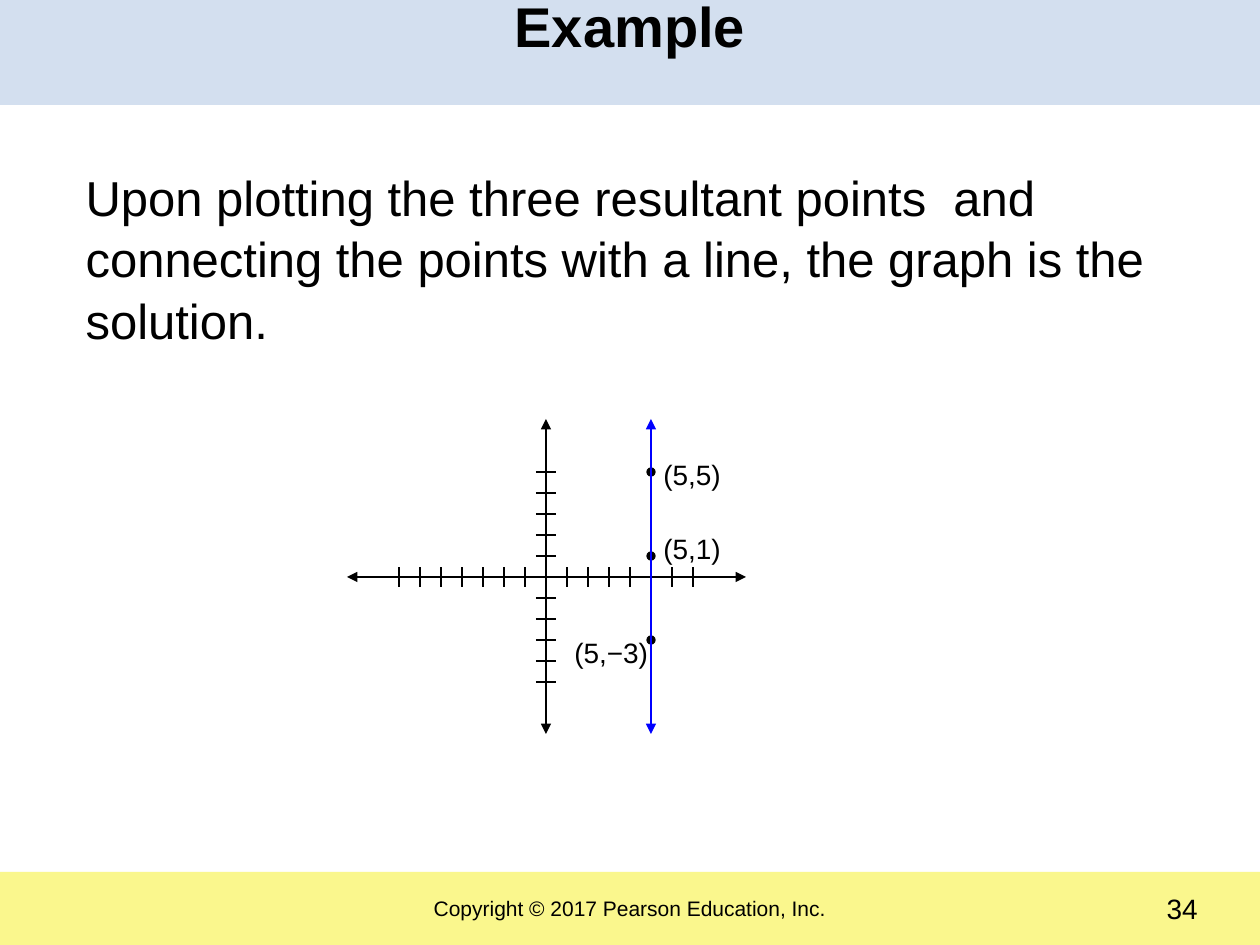
from dataclasses import dataclass

from pptx import Presentation
from pptx import util as u
from pptx.dml.color import RGBColor
from pptx.enum import shapes, text
from pptx.oxml.ns import qn
from lxml import etree


@dataclass(frozen=True)
class Theme:
    font: str = "Arial"
    ink: str = "000000"
    blue: str = "0000FF"
    band: str = "D3DFEF"
    foot: str = "FAF78D"
    title: int = 32
    body: int = 28
    label: int = 16
    small: int = 12
    line: float = 0.75


@dataclass(frozen=True)
class Box:
    x: int
    y: int
    w: int
    h: int


@dataclass(frozen=True)
class Point:
    x: int
    y: int
    name: str
    box: Box


T = Theme()
W, H = 1260, 945
OX, OY, STEP = 546, 577, 21  # origin and unit of the graph
TICK, DOT = 10, 4  # half a tick, radius of a dot
POINTS = [
    Point(5, 5, "(5,5)", Box(651, 451, 95, 46)),
    Point(5, 1, "(5,1)", Box(651, 525, 95, 46)),
    Point(5, -3, "(5,−3)", Box(562, 629, 105, 46)),
]


def px(n: int) -> u.Emu:
    return u.Emu(round(n * 914400 / 126))


def rgb(code: str) -> RGBColor:
    return RGBColor.from_string(code)


def area(box: Box) -> list[u.Emu]:
    return [px(n) for n in (box.x, box.y, box.w, box.h)]


def place(shape, box: Box) -> None:
    shape.left, shape.top, shape.width, shape.height = area(box)


def write(shape, words: str, size: int, align=text.PP_ALIGN.LEFT,
          bold: bool = False, anchor=text.MSO_ANCHOR.TOP):
    frame = shape.text_frame
    frame.word_wrap = True
    frame.auto_size = text.MSO_AUTO_SIZE.NONE
    frame.vertical_anchor = anchor
    para = frame.paragraphs[0]
    para.alignment = align
    para.space_before = u.Pt(0)
    run = para.add_run()
    run.text = words
    font = run.font
    font.name, font.size, font.bold = T.font, u.Pt(size), bold
    font.color.rgb = rgb(T.ink)
    return para


def trim(shape) -> None:
    frame = shape.text_frame
    frame.margin_left = frame.margin_right = 0
    frame.margin_top = frame.margin_bottom = 0


def fill(parent, kind, box: Box, code: str):
    shape = parent.add_shape(kind, *area(box))
    shape.shadow.inherit = False
    shape.fill.solid()
    shape.fill.fore_color.rgb = rgb(code)
    shape.line.fill.background()
    return shape


def rule(parent, x1: int, y1: int, x2: int, y2: int,
         code: str = T.ink, arrows: bool = False) -> None:
    line = parent.add_connector(shapes.MSO_CONNECTOR.STRAIGHT,
                                px(x1), px(y1), px(x2), px(y2))
    line.line.color.rgb = rgb(code)
    line.line.width = u.Pt(T.line)
    props = line._element.spPr
    if arrows:
        for end in ("a:headEnd", "a:tailEnd"):
            etree.SubElement(props.find(qn("a:ln")), qn(end), type="triangle")
    etree.SubElement(props, qn("a:effectLst"))


def label(parent, box: Box, words: str, align=text.PP_ALIGN.LEFT) -> None:
    write(parent.add_textbox(*area(box)), words, T.label, align)


def graph(parent) -> None:
    # Axes and ticks
    rule(parent, OX, 419, OX, 734, arrows=True)
    rule(parent, 347, OY, 746, OY, arrows=True)
    for n in range(-7, 8):
        if n == 0:
            continue
        x, y = OX + n * STEP, OY - n * STEP
        rule(parent, x, OY - TICK, x, OY + TICK)
        if abs(n) <= 5:
            rule(parent, OX - TICK, y, OX + TICK, y)

    # Points with their labels
    for p in POINTS:
        x, y = OX + p.x * STEP, OY - p.y * STEP
        spot = Box(x - DOT, y - DOT, 2 * DOT, 2 * DOT)
        dot = fill(parent, shapes.MSO_SHAPE.OVAL, spot, T.ink)
        dot.line.color.rgb = rgb(T.ink)
        dot.line.width = u.Pt(T.line)
        label(parent, p.box, p.name)

    # Line through the points
    x = OX + 5 * STEP
    rule(parent, x, 419, x, 734, T.blue, arrows=True)


def main() -> None:
    deck = Presentation()
    deck.slide_width, deck.slide_height = px(W), px(H)
    slide = deck.slides.add_slide(deck.slide_layouts[1])
    title, body = slide.placeholders
    center, middle = text.PP_ALIGN.CENTER, text.MSO_ANCHOR.MIDDLE

    # Bands, kept behind the placeholders
    rect = shapes.MSO_SHAPE.RECTANGLE
    foot = fill(slide.shapes, rect, Box(0, 872, W, 73), T.foot)
    trim(foot)
    write(foot, "Copyright © 2017 Pearson Education, Inc.", T.small,
          center, anchor=middle)
    band = fill(slide.shapes, rect, Box(0, 0, W, 105), T.band)
    for shape in (band, foot):
        slide.shapes._spTree.insert(2, shape._element)
    label(slide.shapes, Box(916, 885, 294, 42), "34", text.PP_ALIGN.RIGHT)

    # Title and body
    place(title, Box(0, 0, W, 50))
    trim(title)
    write(title, "Example", T.title, center, True, middle)
    place(body, Box(73, 158, 1137, 683))
    para = write(body, "Upon plotting the three resultant points  and "
                 "connecting the points with a line, the graph is the "
                 "solution.", T.body)
    para.line_spacing = 1.05
    props = para._p.get_or_add_pPr()
    props.set("marL", "0")
    props.set("indent", "0")
    etree.SubElement(props, qn("a:buNone"))

    graph(slide.shapes.add_group_shape().shapes)
    deck.save("out.pptx")


if __name__ == "__main__":
    main()
